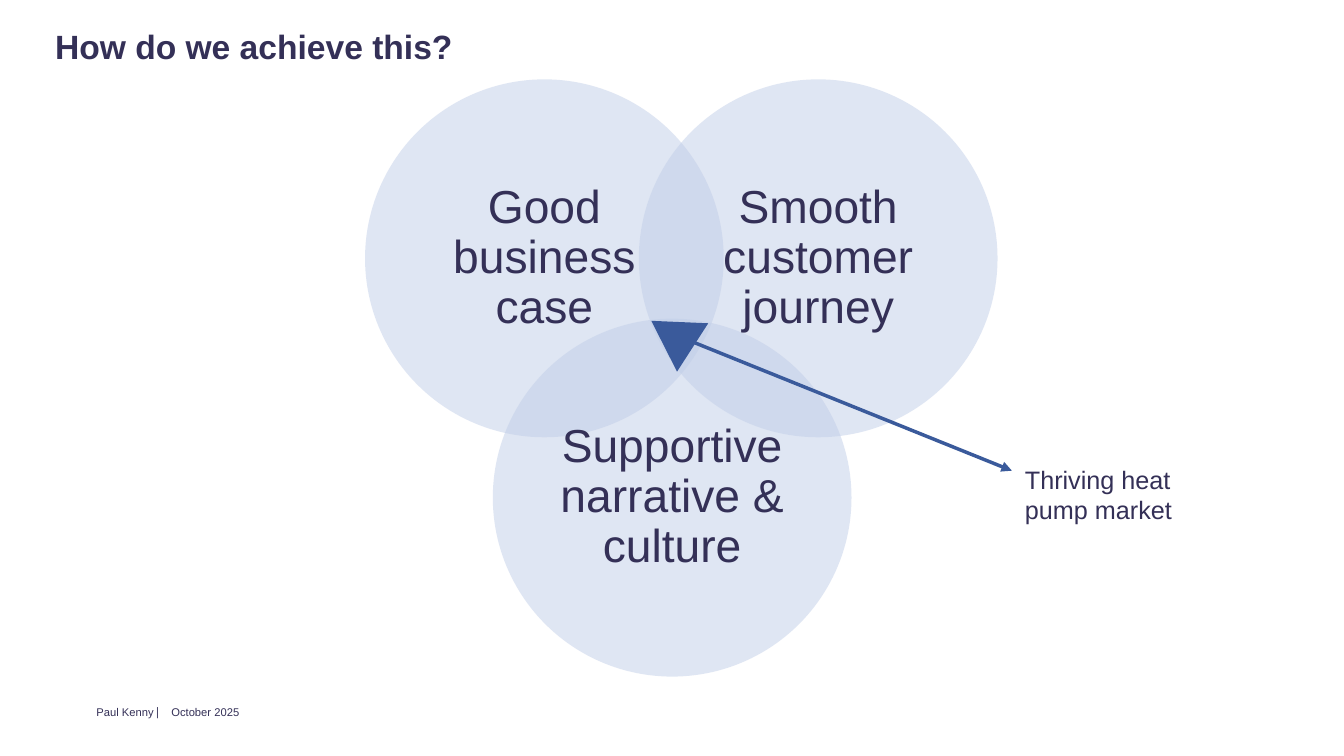
"""Build a slide with a three-circle Venn diagram and a labelled centre."""
import pptx
import pptx.util
import pptx.dml.color
import pptx.enum.shapes
import pptx.enum.text
import pptx.oxml
import pptx.oxml.ns
from pptx.util import Cm, Pt
from lxml import etree

COLORS = {"text": "343057", "circle": "C1CEE8", "accent": "3A5A9B"}
FONT = "Arial"
CIRCLE_W, CIRCLE_H, LABEL_SIZE = 9.04, 9.02, 6.38
CIRCLES = [
    ("Good business case", 9.2, 2.0),
    ("Supportive narrative & culture", 12.42, 8.03),
    ("Smooth customer journey", 16.1, 2.0),
]
SHAPES = pptx.enum.shapes.MSO_SHAPE
ANCHOR = pptx.enum.text.MSO_ANCHOR
ALIGN = pptx.enum.text.PP_ALIGN


def rgb(name):
    return pptx.dml.color.RGBColor.from_string(COLORS[name])


def add_text(s, text, box, size, bold=False, anchor=ANCHOR.TOP, inset=None):
    sp = s.shapes.add_textbox(*map(Cm, box))
    tf = sp.text_frame
    tf.word_wrap = True
    tf.vertical_anchor = anchor
    if inset is not None:
        tf.margin_left = tf.margin_right = tf.margin_top = tf.margin_bottom = Cm(inset)
    p = tf.paragraphs[0]
    p.text = text
    p.font.name = FONT
    p.font.size = Pt(size)
    p.font.bold = bold
    p.font.color.rgb = rgb("text")
    return p


def add_filled(s, kind, box, color, alpha=None):
    sp = s.shapes.add_shape(kind, *map(Cm, box))
    sp.shadow.inherit = False
    sp.fill.solid()
    sp.fill.fore_color.rgb = rgb(color)
    sp.line.fill.background()
    if alpha is not None:
        clr = sp.fill._xPr.find(".//" + pptx.oxml.ns.qn("a:srgbClr"))
        etree.SubElement(clr, pptx.oxml.ns.qn("a:alpha"), val=str(alpha * 1000))
    return sp


def add_circle(s, text, left, top):
    add_filled(s, SHAPES.OVAL, (left, top, CIRCLE_W, CIRCLE_H), "circle", 50)
    box = (left + (CIRCLE_W - LABEL_SIZE) / 2, top + (CIRCLE_H - LABEL_SIZE) / 2,
           LABEL_SIZE, LABEL_SIZE)
    p = add_text(s, text, box, 33, anchor=ANCHOR.MIDDLE, inset=0.36)
    p.alignment = ALIGN.CENTER
    p.line_spacing = 0.9


def add_arrow(s, start, end):
    cn = s.shapes.add_connector(pptx.enum.shapes.MSO_CONNECTOR.STRAIGHT,
                                *map(Cm, start + end))
    cn.line.color.rgb = rgb("accent")
    cn.line.width = Pt(2.5)
    etree.SubElement(cn.line._get_or_add_ln(), pptx.oxml.ns.qn("a:tailEnd"), type="triangle")
    etree.SubElement(cn._element.spPr, pptx.oxml.ns.qn("a:effectLst"))


def main():
    prs = pptx.Presentation()
    prs.slide_width, prs.slide_height = Cm(33.87), Cm(19.05)
    s = prs.slides.add_slide(prs.slide_layouts[6])
    add_text(s, "Paul Kenny ⎸ October 2025", (2.18, 17.4, 28.63, 1.07), 8,
             anchor=ANCHOR.MIDDLE)
    for text, left, top in CIRCLES:
        add_circle(s, text, left, top)
    add_text(s, "How do we achieve this?", (1.14, 0.41, 31.55, 2.13), 24,
             bold=True, inset=0.25)
    centre = add_filled(s, SHAPES.ISOSCELES_TRIANGLE, (16.21, 7.8, 1.45, 1.24), "accent")
    centre.rotation = 302.8
    add_arrow(s, (17.12, 8.48), (25.5, 11.86))
    add_text(s, "Thriving heat pump market", (25.58, 11.58, 5.28, 1.8), 18)
    prs.save("out.pptx")


if __name__ == "__main__":
    main()
